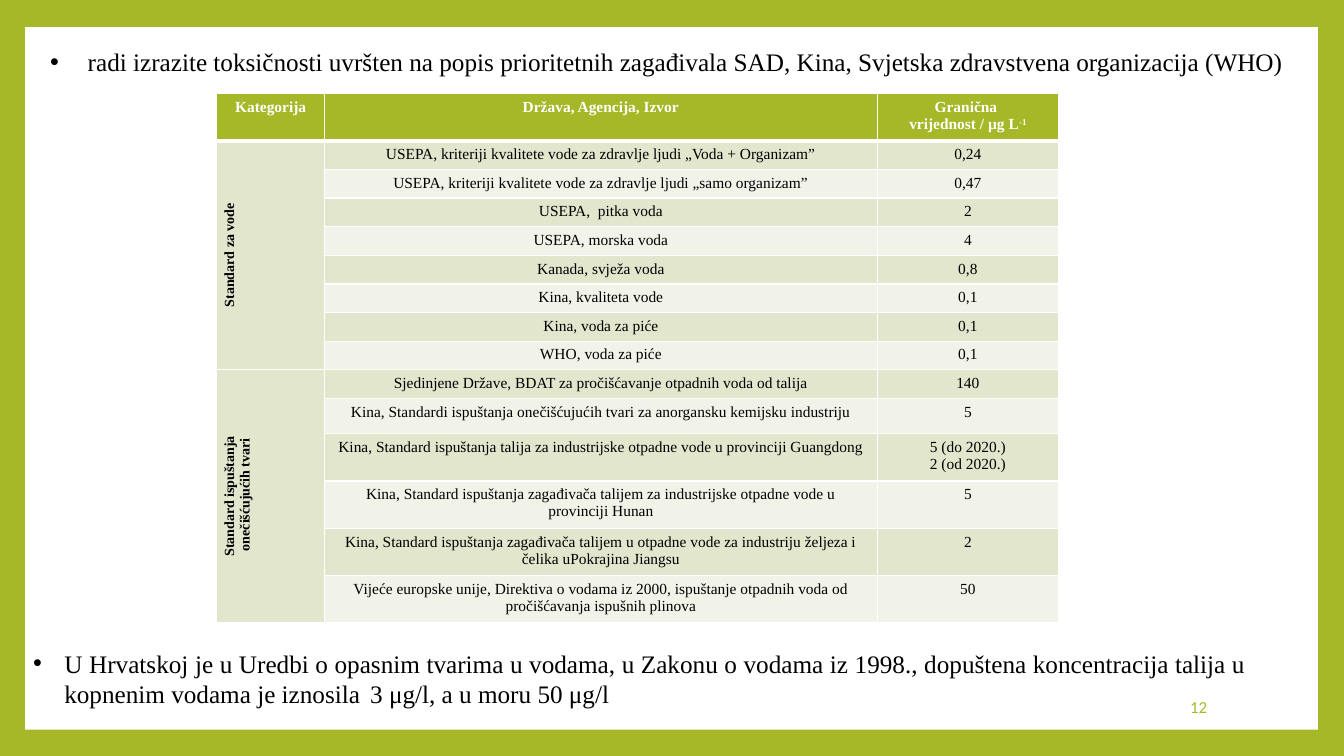
from pptx import Presentation
from pptx.util import Inches, Pt
from pptx.dml.color import RGBColor as RGB
from pptx.enum.shapes import MSO_SHAPE as Shape
from pptx.enum.text import PP_ALIGN as Align, MSO_ANCHOR as Anchor
from pptx.oxml import parse_xml
from pptx.oxml.ns import nsdecls

COLORS = {"green": "A6B727", "white": "FFFFFF", "black": "000000",
          "dark": "E1E6CD", "light": "F1F3E8"}
SERIF = "Times New Roman"


def add_run(par, text, size, color="black", font=SERIF, bold=False):
    run = par.add_run()
    run.text = text
    run.font.size, run.font.name, run.font.bold = Pt(size), font, bold
    run.font.color.rgb = RGB.from_string(COLORS[color])
    return run


def fill_cell(cell, lines, size, color, back, bold=False, base=1):
    props = cell._tc.get_or_add_tcPr()
    for side, width in (("L", 1), ("R", 1), ("T", 1), ("B", base)):
        props.append(parse_xml(
            f'<a:ln{side} {nsdecls("a")} w="{Pt(width)}"><a:solidFill>'
            f'<a:srgbClr val="{COLORS["white"]}"/></a:solidFill></a:ln{side}>'))
    cell.fill.solid()
    cell.fill.fore_color.rgb = RGB.from_string(COLORS[back])
    for i, line in enumerate(lines):
        par = cell.text_frame.paragraphs[0] if i == 0 else cell.text_frame.add_paragraph()
        par.alignment = Align.CENTER
        add_run(par, line, size, color, bold=bold)


# Slide with green frame and white panel
prs = Presentation()
prs.slide_width, prs.slide_height = Inches(13.33), Inches(7.5)
slide = prs.slides.add_slide(prs.slide_layouts[6])
slide.background.fill.solid()
slide.background.fill.fore_color.rgb = RGB.from_string(COLORS["green"])
panel = slide.shapes.add_shape(Shape.RECTANGLE, Inches(0.25), Inches(0.27),
                               Inches(12.82), Inches(6.97))
panel.shadow.inherit = False
panel.fill.solid()
panel.fill.fore_color.rgb = RGB.from_string(COLORS["white"])
panel.line.fill.background()

# Page number
box = slide.shapes.add_textbox(Inches(10.2), Inches(6.81), Inches(1.87), Inches(0.4))
box.text_frame.word_wrap = True
box.text_frame.vertical_anchor = Anchor.MIDDLE
par = box.text_frame.paragraphs[0]
par.alignment = Align.RIGHT
add_run(par, "12", 12, "green", "Calibri")

# Bullet texts above and below the table
bullets = [
    ((0.4, 0.41, 12.53, 0.4), 0,
     [(" radi izrazite toksičnosti uvršten na popis prioritetnih zagađivala SAD, Kina, "
       "Svjetska zdravstvena organizacija (WHO)", 18, SERIF)]),
    ((0.23, 6.38, 12.23, 0.71), 8,
     [("U Hrvatskoj je u Uredbi o opasnim tvarima u vodama, u Zakonu o vodama iz 1998., "
       "dopuštena koncentracija talija u kopnenim vodama je iznosila", 18, SERIF),
      (" ", 11, "Calibri"),
      (" 3 μg/l, a u moru 50 μg/l ", 18, SERIF)]),
]
for place, after, runs in bullets:
    box = slide.shapes.add_textbox(*map(Inches, place))
    box.text_frame.word_wrap = True
    par = box.text_frame.paragraphs[0]
    par.alignment = Align.JUSTIFY
    par.space_after = Pt(after)
    props = par._p.get_or_add_pPr()
    props.set("marL", str(Inches(0.31)))
    props.set("indent", str(-Inches(0.31)))
    props.append(parse_xml(f'<a:buFont {nsdecls("a")} typeface="Arial"/>'))
    props.append(parse_xml(f'<a:buChar {nsdecls("a")} char="•"/>'))
    for text, size, font in runs:
        add_run(par, text, size, font=font)

# Limit values, grouped by category
heads = [["Kategorija"], ["Država, Agencija, Izvor"], ["Granična ", "vrijednost / µg L"]]
groups = [
    (["Standard za vode"], [
        ("USEPA, kriteriji kvalitete vode za zdravlje ljudi „Voda + Organizam”", "0,24"),
        ("USEPA, kriteriji kvalitete vode za zdravlje ljudi „samo organizam”", "0,47"),
        ("USEPA,  pitka voda", "2"),
        ("USEPA, morska voda", "4"),
        ("Kanada, svježa voda", "0,8"),
        ("Kina, kvaliteta vode", "0,1"),
        ("Kina, voda za piće", "0,1"),
        ("WHO, voda za piće", "0,1")]),
    (["Standard ispuštanja", " onečišćujućih tvari"], [
        ("Sjedinjene Države, BDAT za pročišćavanje otpadnih voda od talija", "140"),
        ("Kina, Standardi ispuštanja onečišćujućih tvari za anorgansku kemijsku industriju", "5"),
        ("Kina, Standard ispuštanja talija za industrijske otpadne vode u provinciji Guangdong",
         "5 (do 2020.)\n2 (od 2020.)"),
        ("Kina, Standard ispuštanja zagađivača talijem za industrijske otpadne vode "
         "u provinciji Hunan", "5"),
        ("Kina, Standard ispuštanja zagađivača talijem u otpadne vode za industriju "
         "željeza i čelika uPokrajina Jiangsu", "2"),
        ("Vijeće europske unije, Direktiva o vodama iz 2000, ispuštanje otpadnih voda "
         "od pročišćavanja ispušnih plinova", "50")]),
]
widths = [1.07, 5.48, 1.8]
heights = [0.46] + [0.28] * 9 + [0.35] + [0.47] * 4
table = slide.shapes.add_table(len(heights), len(widths), Inches(2.15), Inches(0.93),
                               Inches(sum(widths)), Inches(sum(heights))).table
for col, width in zip(table.columns, widths):
    col.width = Inches(width)
for row, height in zip(table.rows, heights):
    row.height = Inches(height)

# Header row
for c, lines in enumerate(heads):
    fill_cell(table.cell(0, c), lines, 11, "white", "green", True, 3)
power = add_run(table.cell(0, 2).text_frame.paragraphs[1], "-1", 11, "white", bold=True)
power.font._element.set("baseline", "30000")

# Body rows
top = 1
for name, items in groups:
    for r, item in enumerate(items, top):
        for c, text in enumerate(item, 1):
            fill_cell(table.cell(r, c), text.split("\n"), 11, "black",
                      "dark" if r % 2 else "light")
        fill_cell(table.cell(r, 0), name if r == top else [], 10, "black", "dark", True)
    side = table.cell(top, 0)
    side.merge(table.cell(top + len(items) - 1, 0))
    side.vertical_anchor = Anchor.MIDDLE
    side._tc.get_or_add_tcPr().set("vert", "vert270")
    top += len(items)

prs.save("out.pptx")
